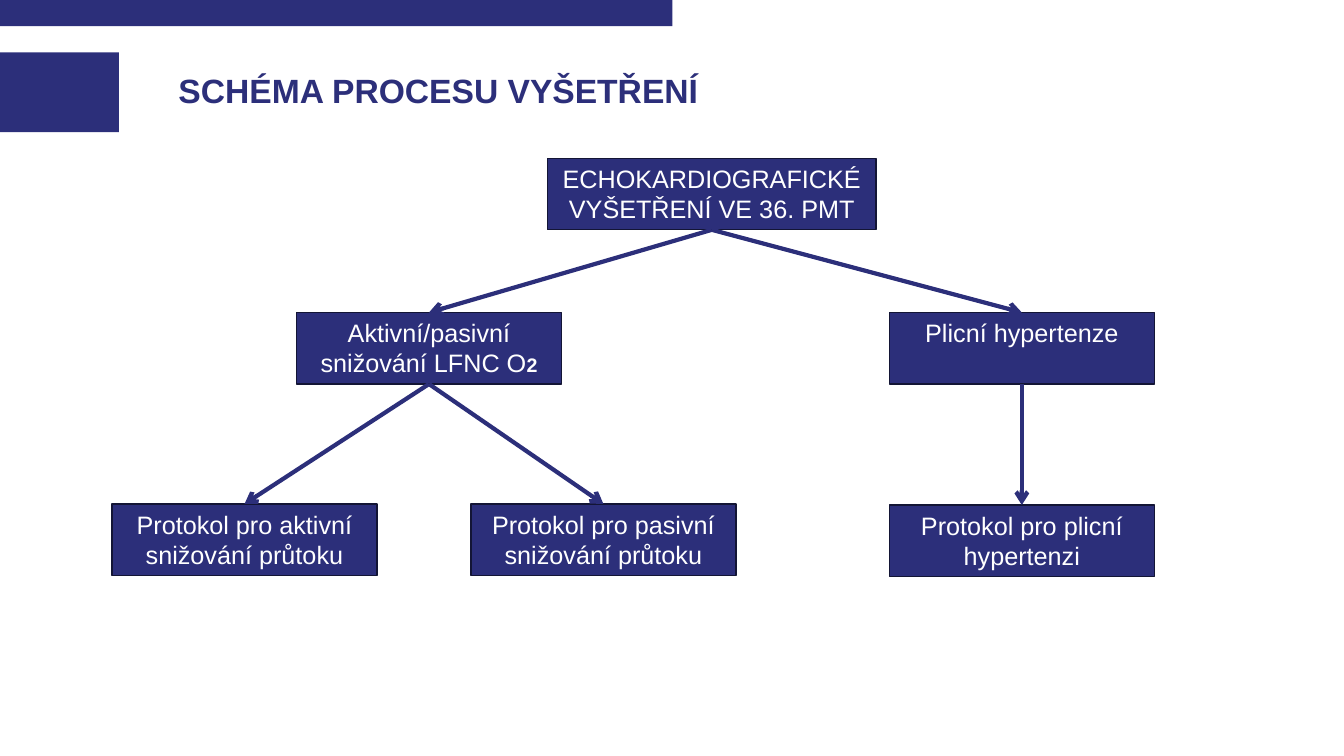
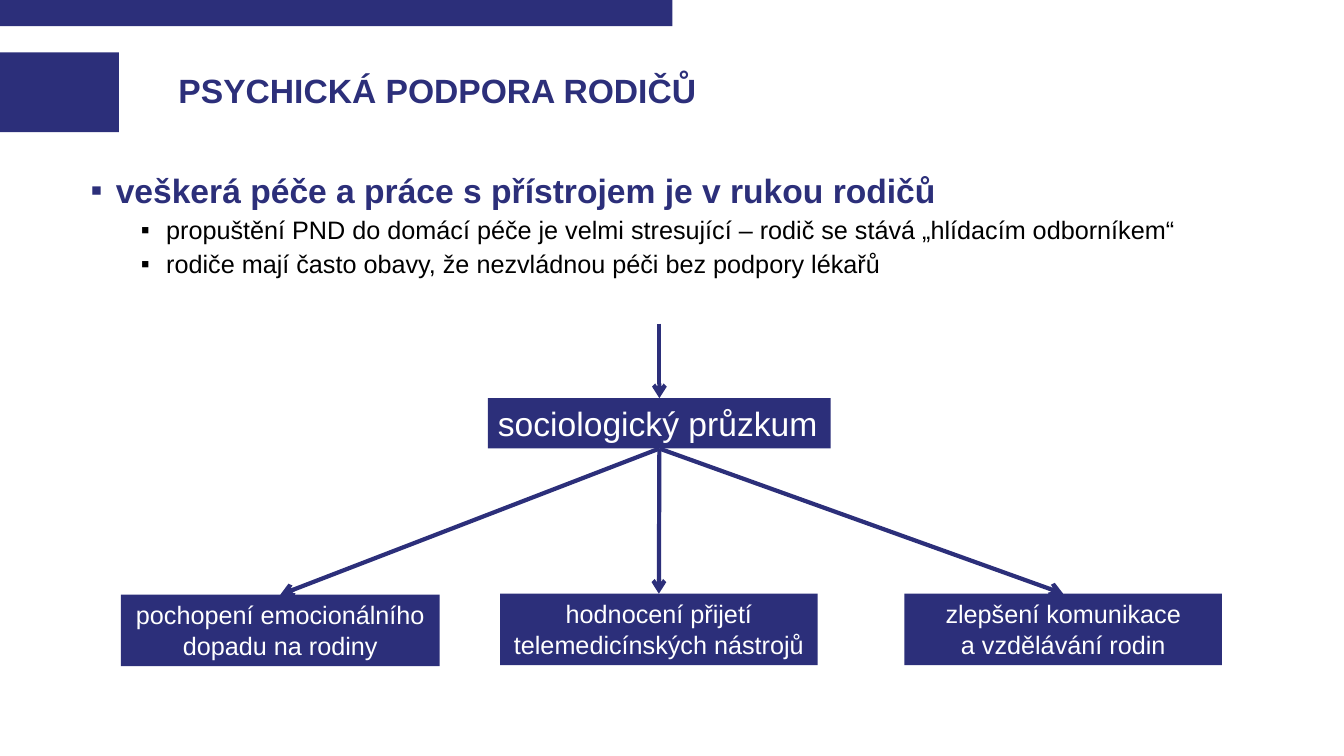
from dataclasses import dataclass

from lxml import etree
from pptx import Presentation
from pptx import util as u
from pptx.dml import color
from pptx.enum import shapes, text
from pptx.oxml import ns

COLORS = {"navy": "2C2F7A", "outline": "131535", "white": "FFFFFF", "black": "000000"}
FONT = "Arial"
TOP, BOTTOM = 0, 2


@dataclass(frozen=True)
class Box:
    left: float
    top: float
    width: float
    text: str
    height: float = 0.71
    size: int = 18
    outlined: bool = False
    centered: bool = True
    subscript: str = ""


@dataclass(frozen=True)
class Bullet:
    text: str
    level: int
    size: int
    color: str
    bold: bool
    indent: float
    space_before: int


SCHEME_BOXES = {
    "echo": Box(5.43, 1.57, 3.26, "ECHOKARDIOGRAFICKÉ VYŠETŘENÍ VE 36. PMT", outlined=True),
    "weaning": Box(2.94, 3.1, 2.63, "Aktivní/pasivní snižování LFNC O", outlined=True, subscript="2"),
    "hypertension": Box(8.82, 3.1, 2.63, "Plicní hypertenze", outlined=True),
    "active": Box(1.11, 5, 2.63, "Protokol pro aktivní snižování průtoku", outlined=True),
    "passive": Box(4.67, 5, 2.63, "Protokol pro pasivní snižování průtoku", outlined=True),
    "pulmonary": Box(8.82, 5.01, 2.63, "Protokol pro plicní hypertenzi", outlined=True),
}
SCHEME_LINKS = [
    ("echo", "weaning"),
    ("echo", "hypertension"),
    ("weaning", "active"),
    ("weaning", "passive"),
    ("hypertension", "pulmonary"),
]
SUPPORT_BOXES = {
    "survey": Box(4.84, 3.95, 3.4, "sociologický průzkum", height=0.5, size=24, centered=False),
    "impact": Box(1.2, 5.9, 3.16, "pochopení emocionálního\vdopadu na rodiny"),
    "tools": Box(4.96, 5.89, 3.15, "hodnocení přijetí\vtelemedicínských nástrojů"),
    "communication": Box(8.97, 5.89, 3.15, "zlepšení komunikace\va vzdělávání rodin"),
}
SUPPORT_LINKS = [("survey", "tools"), ("survey", "impact"), ("survey", "communication")]
SUPPORT_BULLETS = [
    Bullet("veškerá péče a práce s přístrojem je v rukou rodičů", 0, 24, "navy", True, 0.25, 0),
    Bullet(
        "propuštění PND do domácí péče je velmi stresující – rodič se stává „hlídacím odborníkem“",
        1, 18, "black", False, 0.75, 5,
    ),
    Bullet(
        "rodiče mají často obavy, že nezvládnou péči bez podpory lékařů",
        1, 18, "black", False, 0.75, 5,
    ),
]


def rgb(name: str) -> color.RGBColor:
    return color.RGBColor.from_string(COLORS[name])


def style_run(run, size: int, color_name: str, bold: bool = False) -> None:
    run.font.name = FONT
    run.font.size = u.Pt(size)
    run.font.bold = bold
    run.font.color.rgb = rgb(color_name)


def add_rectangle(slide, left: float, top: float, width: float, height: float):
    shape = slide.shapes.add_shape(
        shapes.MSO_SHAPE.RECTANGLE,
        u.Inches(left), u.Inches(top), u.Inches(width), u.Inches(height),
    )
    shape.shadow.inherit = False
    shape.fill.solid()
    shape.fill.fore_color.rgb = rgb("navy")
    shape.line.fill.background()
    return shape


def add_text_box(slide, left: float, top: float, width: float, height: float):
    shape = slide.shapes.add_textbox(
        u.Inches(left), u.Inches(top), u.Inches(width), u.Inches(height)
    )
    shape.text_frame.word_wrap = True
    return shape.text_frame


def add_titled_slide(presentation, title: str):
    slide = presentation.slides.add_slide(presentation.slide_layouts[6])
    add_rectangle(slide, 0, 0, 6.67, 0.26)
    add_rectangle(slide, 0, 0.52, 1.18, 0.79)
    frame = add_text_box(slide, 1.77, 0.52, 10.72, 0.79)
    frame.margin_left = 0
    frame.vertical_anchor = text.MSO_ANCHOR.MIDDLE
    frame.text = title
    paragraph = frame.paragraphs[0]
    paragraph.line_spacing = 0.9
    style_run(paragraph.runs[0], 24, "navy", bold=True)
    return slide


def add_box(slide, box: Box):
    shape = add_rectangle(slide, box.left, box.top, box.width, box.height)
    if box.outlined:
        shape.line.color.rgb = rgb("outline")
        shape.line.width = u.Pt(1)
    frame = shape.text_frame
    frame.word_wrap = True
    frame.vertical_anchor = text.MSO_ANCHOR.TOP
    frame.text = box.text
    paragraph = frame.paragraphs[0]
    paragraph.alignment = text.PP_ALIGN.CENTER if box.centered else text.PP_ALIGN.LEFT
    for run in paragraph.runs:
        style_run(run, box.size, "white")
    if box.subscript:
        run = paragraph.add_run()
        run.text = box.subscript
        style_run(run, 14, "white", bold=True)
    return shape


def add_arrow(slide, start: tuple[float, float], end: tuple[float, float]):
    connector = slide.shapes.add_connector(
        shapes.MSO_CONNECTOR.STRAIGHT, *(u.Inches(value) for value in start + end)
    )
    connector.line.color.rgb = rgb("navy")
    connector.line.width = u.Pt(3)
    etree.SubElement(connector.line._get_or_add_ln(), ns.qn("a:tailEnd"), type="arrow")
    etree.SubElement(connector._element.spPr, ns.qn("a:effectLst"))
    return connector


def add_diagram(slide, boxes: dict[str, Box], links: list[tuple[str, str]]) -> dict:
    drawn = {name: add_box(slide, box) for name, box in boxes.items()}
    for parent, child in links:
        connector = add_arrow(slide, (0, 0), (1, 1))
        connector.begin_connect(drawn[parent], BOTTOM)
        connector.end_connect(drawn[child], TOP)
    return drawn


def add_bullets(slide, bullets: list[Bullet]) -> None:
    frame = add_text_box(slide, 0.8, 1.68, 11.73, 1.3)
    for index, bullet in enumerate(bullets):
        paragraph = frame.add_paragraph() if index else frame.paragraphs[0]
        paragraph.text = bullet.text
        paragraph.level = bullet.level
        properties = paragraph._p.get_or_add_pPr()
        properties.set("marL", str(u.Inches(bullet.indent)))
        properties.set("indent", str(-u.Inches(0.25)))
        bullet_color = etree.SubElement(properties, ns.qn("a:buClr"))
        etree.SubElement(bullet_color, ns.qn("a:srgbClr"), val=COLORS[bullet.color])
        etree.SubElement(properties, ns.qn("a:buFont"), typeface=FONT)
        etree.SubElement(properties, ns.qn("a:buChar"), char="▪")
        paragraph.line_spacing = 0.9
        paragraph.space_before = u.Pt(bullet.space_before)
        style_run(paragraph.runs[0], bullet.size, bullet.color, bullet.bold)


def main() -> None:
    presentation = Presentation()
    presentation.slide_width = u.Inches(13.33)
    presentation.slide_height = u.Inches(7.5)

    scheme = add_titled_slide(presentation, "SCHÉMA PROCESU VYŠETŘENÍ")
    add_diagram(scheme, SCHEME_BOXES, SCHEME_LINKS)

    support = add_titled_slide(presentation, "PSYCHICKÁ PODPORA RODIČŮ")
    add_bullets(support, SUPPORT_BULLETS)
    drawn = add_diagram(support, SUPPORT_BOXES, SUPPORT_LINKS)
    survey_arrow = add_arrow(support, (6.54, 3.21), (6.54, 3.95))
    survey_arrow.end_connect(drawn["survey"], TOP)

    presentation.save("out.pptx")


if __name__ == "__main__":
    main()
